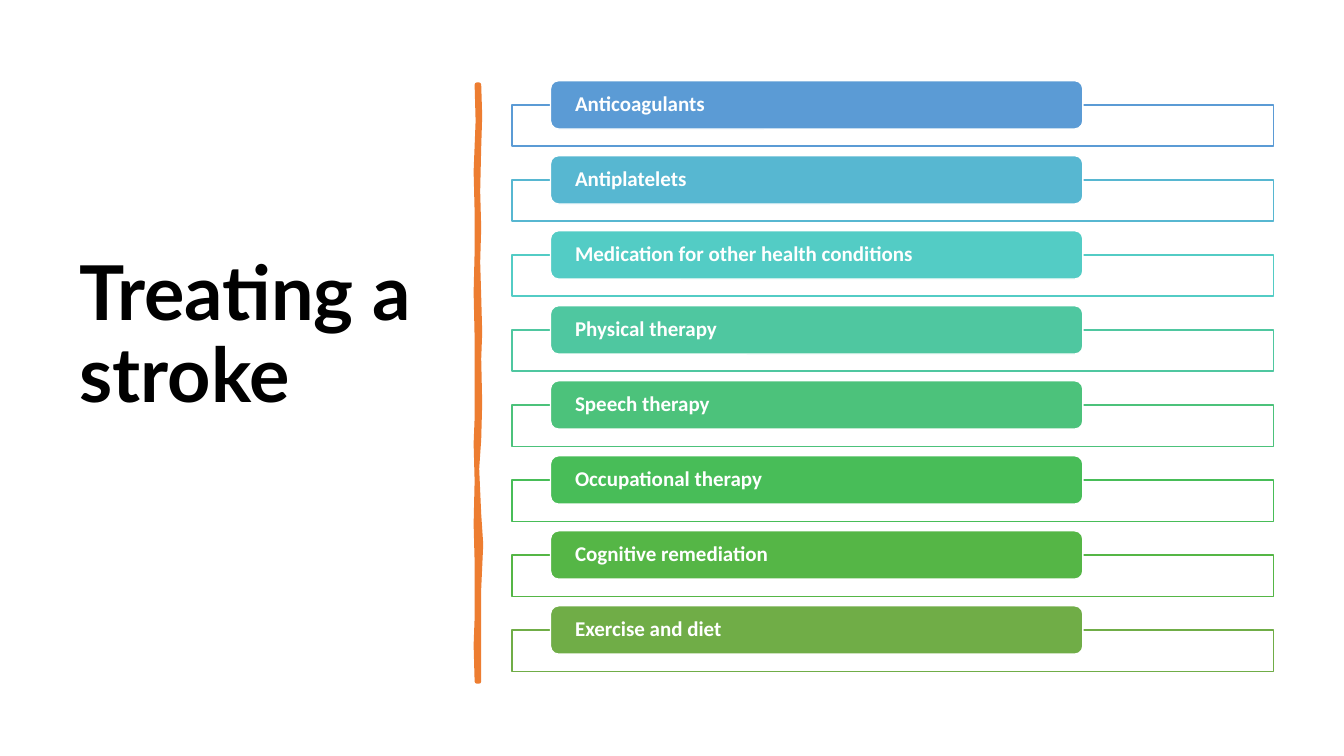
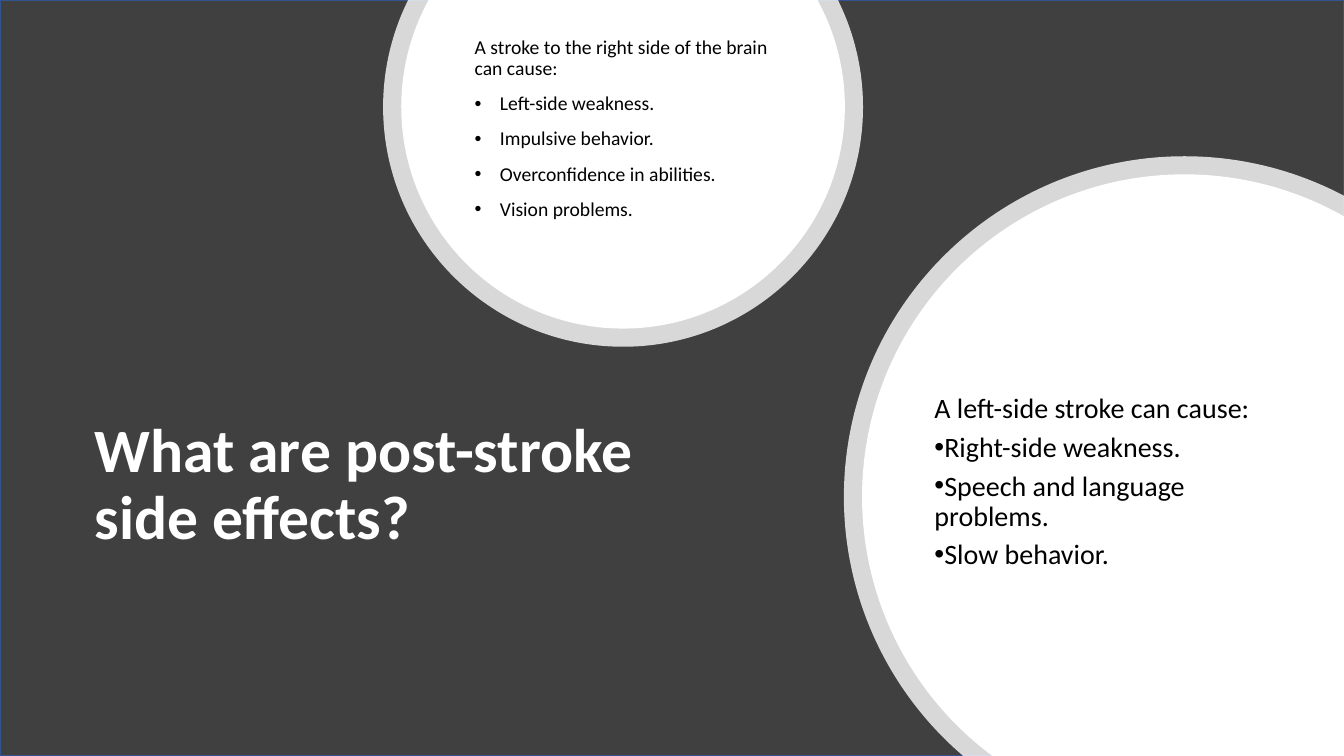
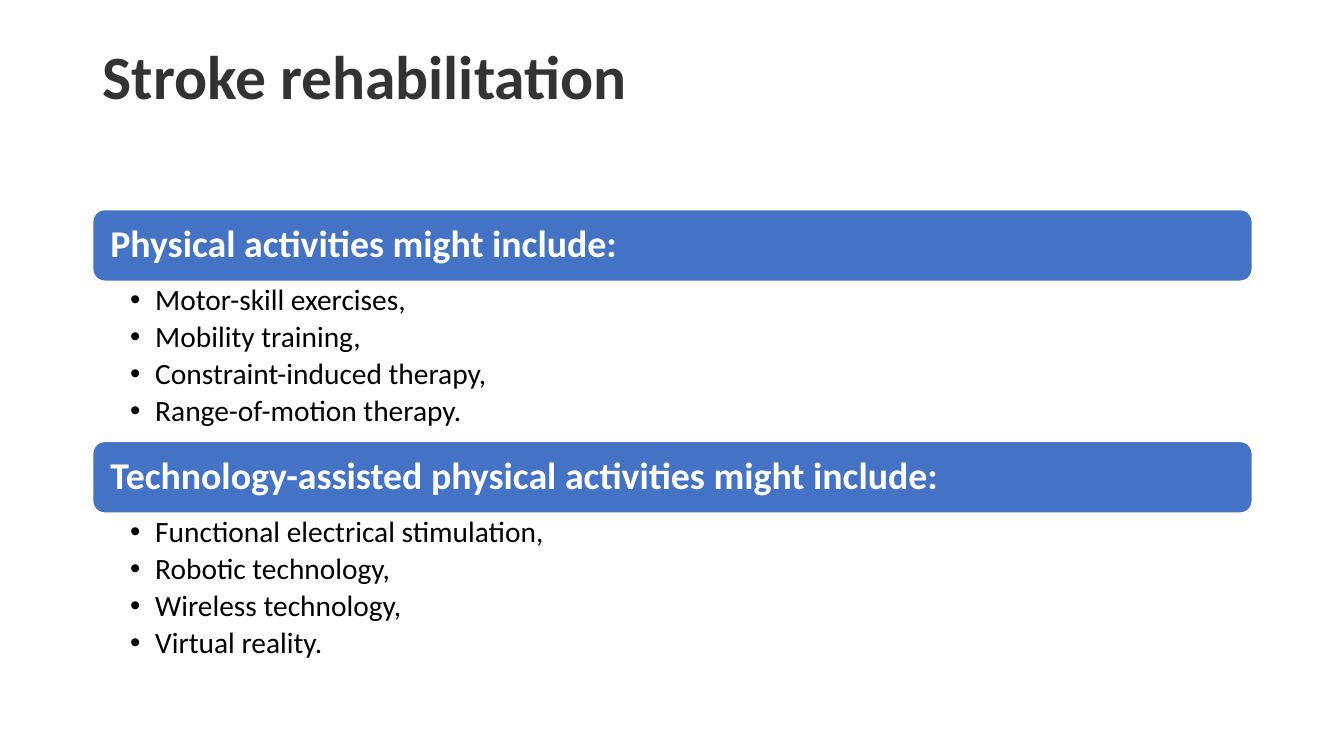
"""Build three slides on treating and recovering from a stroke."""
import math
from itertools import pairwise

from lxml import etree
from pptx import Presentation
from pptx.dml.color import RGBColor
from pptx.enum import shapes, text
from pptx.oxml import ns
from pptx.util import Inches, Pt

WIDTH, HEIGHT = 13.33, 7.5
BODY_FONT, TITLE_FONT = "Calibri", "Lato"
LINE_SPACING = 0.9
HANGING = 0.25

WHITE = RGBColor(0xFF, 0xFF, 0xFF)
BLACK = RGBColor(0x00, 0x00, 0x00)
CHARCOAL = RGBColor(0x40, 0x40, 0x40)
DARK_GREY = RGBColor(0x33, 0x33, 0x33)
NAVY = RGBColor(0x32, 0x54, 0x91)
BLUE = RGBColor(0x44, 0x72, 0xC4)
ORANGE = RGBColor(0xED, 0x7D, 0x31)

TREATMENTS = [
    ("Anticoagulants", RGBColor(0x5B, 0x9B, 0xD5)),
    ("Antiplatelets", RGBColor(0x57, 0xB7, 0xD1)),
    ("Medication for other health conditions", RGBColor(0x53, 0xCC, 0xC5)),
    ("Physical therapy", RGBColor(0x4F, 0xC7, 0xA0)),
    ("Speech therapy", RGBColor(0x4C, 0xC2, 0x7B)),
    ("Occupational therapy", RGBColor(0x48, 0xBD, 0x58)),
    ("Cognitive remediation", RGBColor(0x55, 0xB6, 0x46)),
    ("Exercise and diet", RGBColor(0x70, 0xAD, 0x47)),
]
FIRST_ROW, LAST_ROW = 1.04, 6.25

BRUSH_RIGHT = [
    (4.75, 0.84), (4.76, 1.15), (4.75, 1.46), (4.74, 1.9), (4.75, 2.26),
    (4.74, 2.6), (4.75, 2.94), (4.76, 3.3), (4.75, 3.56), (4.76, 4),
    (4.75, 4.36), (4.73, 4.65), (4.75, 5.1), (4.77, 5.4), (4.75, 5.84),
    (4.75, 6.76),
]
BRUSH_LEFT = [
    (4.73, 6.76), (4.72, 6.4), (4.73, 6.13), (4.73, 5.57), (4.72, 5.2),
    (4.73, 4.77), (4.72, 4.4), (4.73, 4.15), (4.73, 3.35), (4.72, 2.9),
    (4.73, 2.5), (4.73, 2.1), (4.72, 1.7), (4.74, 1.2), (4.73, 0.84),
]

SMALL_CENTER, LARGE_CENTER = (6.18, 1.06), (11.75, 4.93)
RIGHT_SIDE = ["Left-side weakness.", "Impulsive behavior.",
              "Overconfidence in abilities.", "Vision problems."]
LEFT_SIDE = ["Right-side weakness.", "Speech and language problems.",
             "Slow behavior."]
ACTIVITIES = [
    ("Physical activities might include:",
     ["Motor-skill exercises,", "Mobility training,",
      "Constraint-induced therapy,", "Range-of-motion therapy."]),
    ("Technology-assisted physical activities might include:",
     ["Functional electrical stimulation,", "Robotic technology,",
      "Wireless technology,", "Virtual reality."]),
]


def paint(shape, fill, line=None, weight=1):
    """Set the fill and outline of a shape and drop its shadow."""
    shape.shadow.inherit = False
    shape.fill.solid()
    shape.fill.fore_color.rgb = fill
    if line is None:
        shape.line.fill.background()
    else:
        shape.line.color.rgb = line
        shape.line.width = Pt(weight)
    return shape


def add_block(slide, kind, at, fill, line):
    """Add a painted preset shape."""
    return paint(slide.shapes.add_shape(kind, *map(Inches, at)), fill, line)


def add_outline(slide, points):
    """Add a closed outline through points given in inches."""
    start, *rest = [(Inches(x), Inches(y)) for x, y in points]
    builder = slide.shapes.build_freeform(*start, scale=1.0)
    builder.add_line_segments(rest, close=True)
    return builder.convert_to_shape()


def on_circle(center, radius, angle):
    """Return the point of a circle at an angle."""
    return (center[0] + radius * math.cos(angle),
            center[1] + radius * math.sin(angle))


def arc_curve(center, radius, start, end):
    """Return the two controls and the end point of a short arc."""
    reach = math.hypot(1, 4 / 3 * math.tan((end - start) / 4)) * radius
    turn = math.atan(4 / 3 * math.tan((end - start) / 4))
    return [on_circle(center, reach, start + turn),
            on_circle(center, reach, end - turn),
            on_circle(center, radius, end)]


def add_disc(slide, center, radius, angles, corners=(), opacity=100):
    """Add a white disc cut off at the slide edges."""
    knots = [on_circle(center, radius, angle) for angle in angles]
    disc = paint(add_outline(slide, [*knots, *corners]), WHITE)
    sides = disc._element.findall(".//" + ns.qn("a:lnTo"))
    for side, (start, end) in zip(sides, pairwise(angles)):
        curve = etree.Element(ns.qn("a:cubicBezTo"))
        for x, y in arc_curve(center, radius, start, end):
            etree.SubElement(curve, ns.qn("a:pt"),
                             x=str(Inches(x) - disc.left),
                             y=str(Inches(y) - disc.top))
        side.getparent().replace(side, curve)
    if opacity < 100:
        color = disc._element.spPr.find(".//" + ns.qn("a:srgbClr"))
        etree.SubElement(color, ns.qn("a:alpha"), val=str(opacity * 1000))


def add_small_disc(slide, radius, opacity=100):
    """Add the disc that the top edge cuts off."""
    cut = math.asin(SMALL_CENTER[1] / radius)
    angles = [-cut, 0, math.pi / 2, math.pi, math.pi + cut]
    add_disc(slide, SMALL_CENTER, radius, angles, opacity=opacity)


def add_large_disc(slide, radius, opacity=100):
    """Add the disc that the right and bottom edges cut off."""
    x, y = LARGE_CENTER
    angles = [math.pi - math.asin((HEIGHT - y) / radius), math.pi,
              1.5 * math.pi, 2 * math.pi - math.acos((WIDTH - x) / radius)]
    add_disc(slide, LARGE_CENTER, radius, angles, [(WIDTH, HEIGHT)], opacity)


def add_bullet(paragraph, margin):
    """Give a paragraph a round bullet and a hanging indent."""
    props = paragraph._p.get_or_add_pPr()
    props.set("marL", str(Inches(margin)))
    props.set("indent", str(-Inches(HANGING)))
    etree.SubElement(props, ns.qn("a:buFont"), typeface="Arial")
    etree.SubElement(props, ns.qn("a:buChar"), char="•")


def write(shape, size, color, lead=None, bullets=(), bold=False,
          font=BODY_FONT, margin=HANGING, before=0, after=0,
          insets=(0.1, 0.05, 0.1, 0.05), anchor=text.MSO_ANCHOR.MIDDLE):
    """Fill a shape with an optional lead line and bulleted lines."""
    frame = shape.text_frame
    frame.word_wrap = True
    frame.vertical_anchor = anchor
    (frame.margin_left, frame.margin_top,
     frame.margin_right, frame.margin_bottom) = map(Inches, insets)
    lines = [(lead, False)] if lead else []
    lines += [(item, True) for item in bullets]
    for index, (line, bulleted) in enumerate(lines):
        paragraph = frame.add_paragraph() if index else frame.paragraphs[0]
        paragraph.text = line
        paragraph.alignment = text.PP_ALIGN.LEFT
        if bulleted:
            add_bullet(paragraph, margin)
        paragraph.line_spacing = LINE_SPACING
        paragraph.space_before = Pt(before if index else 0)
        paragraph.space_after = Pt(after)
        paragraph.font.name = font
        paragraph.font.size = Pt(size)
        paragraph.font.bold = bold
        paragraph.font.color.rgb = color


def add_text(slide, at, size, color, **options):
    """Add a text box."""
    write(slide.shapes.add_textbox(*map(Inches, at)), size, color, **options)


def add_title(slide, at, title, color, size=44, font=BODY_FONT):
    """Add a bold slide title."""
    add_text(slide, at, size, color, lead=title, bold=True, font=font)


def add_label(slide, at, label, fill, size, inset):
    """Add a rounded bar with a bold white label."""
    bar = add_block(slide, shapes.MSO_SHAPE.ROUNDED_RECTANGLE, at, fill, WHITE)
    write(bar, size, WHITE, lead=label, bold=True,
          insets=(inset, 0, inset, 0))


def build_treatments(slide):
    """Build the list of treatments."""
    add_title(slide, (0.69, 0.7, 3.74, 5.29), "Treating a stroke", BLACK,
              54, TITLE_FONT)
    paint(add_outline(slide, BRUSH_RIGHT + BRUSH_LEFT), ORANGE, ORANGE, 3.25)
    pitch = (LAST_ROW - FIRST_ROW) / (len(TREATMENTS) - 1)
    for row, (treatment, color) in enumerate(TREATMENTS):
        top = FIRST_ROW + row * pitch
        add_block(slide, shapes.MSO_SHAPE.RECTANGLE,
                  (5.08, top, 7.55, 0.41), WHITE, color)
        add_label(slide, (5.46, top - 0.24, 5.28, 0.48), treatment, color,
                  15, 0.22)


def build_side_effects(slide):
    """Build the two discs of side effects."""
    add_block(slide, shapes.MSO_SHAPE.RECTANGLE, (0, 0, WIDTH, HEIGHT),
              CHARCOAL, NAVY)
    add_title(slide, (0.84, 3.83, 6.62, 1.98),
              "What are post-stroke side effects?", WHITE)
    add_small_disc(slide, 2.38, opacity=80)
    add_large_disc(slide, 3.38, opacity=80)
    add_small_disc(slide, 2.2)
    add_text(slide, (4.61, 0.3, 3.15, 1.96), 14, BLACK,
             lead="A stroke to the right side of the brain can cause:",
             bullets=RIGHT_SIDE, before=10)
    add_large_disc(slide, 3.2)
    add_text(slide, (9.17, 3.44, 3.8, 2.7), 20, BLACK,
             lead="A left-side stroke can cause:", bullets=LEFT_SIDE,
             margin=0, after=6)


def build_rehabilitation(slide):
    """Build the two groups of activities."""
    add_title(slide, (0.92, 0.4, 11.5, 0.78), "Stroke rehabilitation",
              DARK_GREY)
    for group, (heading, items) in enumerate(ACTIVITIES):
        top = 2.08 + group * 2.3
        add_label(slide, (0.92, top, 11.5, 0.71), heading, BLUE, 27, 0.14)
        add_text(slide, (0.92, top + 0.71, 11.5, 1.59), 21, BLACK,
                 bullets=items, after=3.7, insets=(0.37, 0.04, 0.21, 0.04),
                 anchor=text.MSO_ANCHOR.TOP)


def main():
    """Create and save the presentation."""
    deck = Presentation()
    deck.slide_width, deck.slide_height = Inches(WIDTH), Inches(HEIGHT)
    for build in (build_treatments, build_side_effects, build_rehabilitation):
        build(deck.slides.add_slide(deck.slide_layouts[6]))
    deck.save("out.pptx")


if __name__ == "__main__":
    main()
